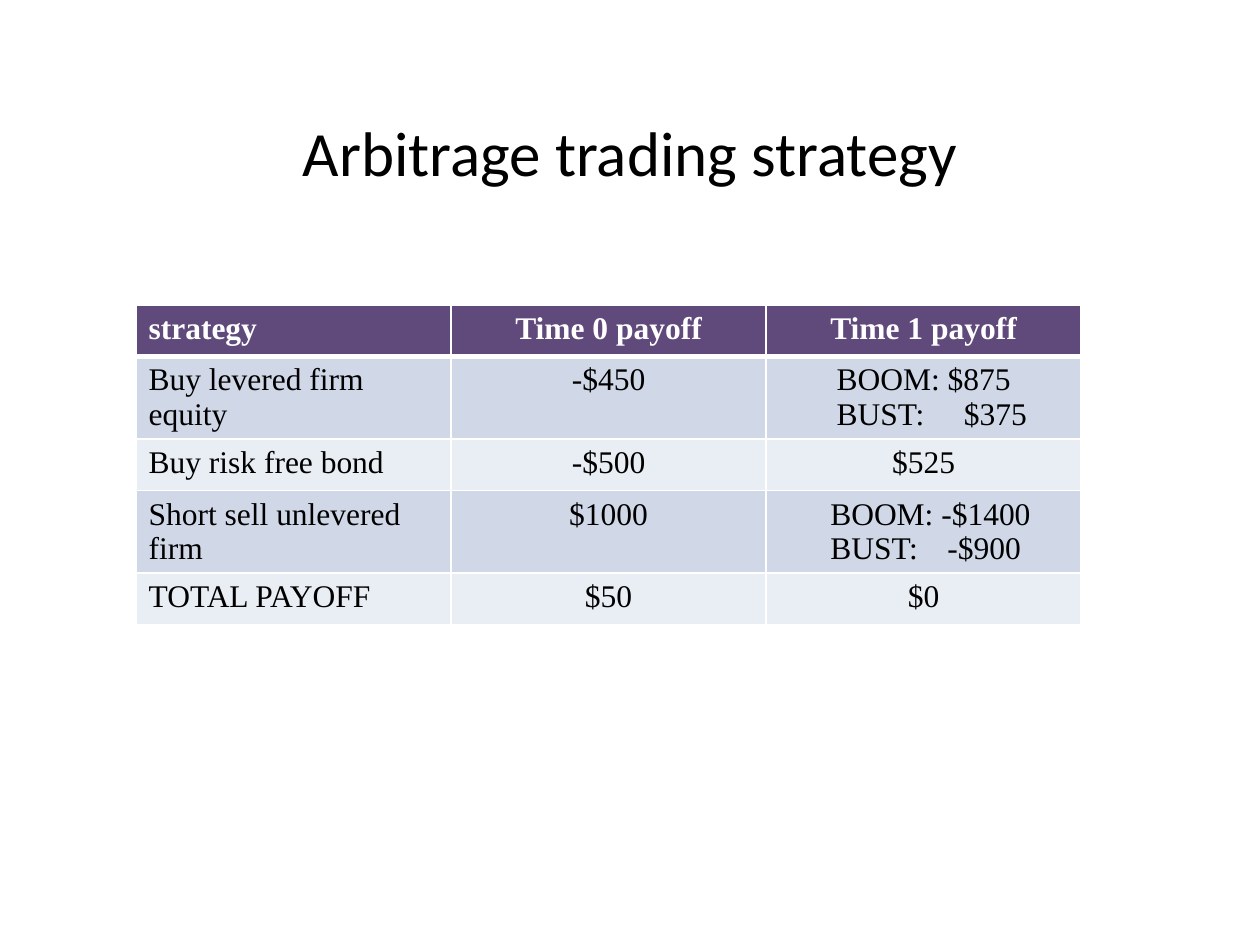
from lxml import etree
from pptx import Presentation
from pptx.dml.color import RGBColor
from pptx.enum.text import MSO_ANCHOR, PP_ALIGN
from pptx.oxml.ns import qn
from pptx.util import Inches, Pt

LEFT, MID = PP_ALIGN.LEFT, PP_ALIGN.CENTER
CENTER = MSO_ANCHOR.MIDDLE
COLORS = {"head": "604A7B", "odd": "D0D8E8", "even": "E9EDF4",
          "ink": "000000", "white": "FFFFFF"}
WIDE, HIGH = 10, 7.5
COL, ROW, TALL = 2.5, 0.41, 0.65
ROWS = [
    ["strategy", "Time 0 payoff", "Time 1 payoff"],
    ["Buy levered firm equity", "-$450", "BOOM: $875\nBUST:\t$375"],
    ["Buy risk free bond", "-$500", "$525"],
    ["Short sell unlevered firm", "$1000", "BOOM: -$1400\nBUST:\t-$900"],
    ["TOTAL PAYOFF", "$50", "$0"],
]
# Row: (left margin, tab stop) of its boom and bust lines
STOPS = {1: (0.56, 1.01), 3: (0.51, 0.93)}


def add_run(para, text, font, size, color, bold=False):
    run = para.add_run()
    run.text = text
    run.font.name = font
    run.font.size = Pt(size)
    run.font.bold = bold
    run.font.color.rgb = RGBColor.from_string(COLORS[color])


def add_title(slide, text):
    title = slide.shapes.title
    title.left, title.top = Inches(0.05 * WIDE), Inches(0.58)
    title.width, title.height = Inches(0.9 * WIDE), Inches(HIGH / 6)
    title.text_frame.vertical_anchor = CENTER
    para = title.text_frame.paragraphs[0]
    para.alignment = MID
    add_run(para, text, "Calibri", 36, "ink")


def add_edges(cell, row):
    """Draw white cell borders, thick below the header."""
    props = cell._tc.get_or_add_tcPr()
    widths = {"L": 1, "R": 1, "T": 3 if row == 1 else 1, "B": 3 if row == 0 else 1}
    for spot, (side, width) in enumerate(widths.items()):
        line = etree.Element(qn("a:ln" + side), w=str(Pt(width)))
        fill = etree.SubElement(line, qn("a:solidFill"))
        etree.SubElement(fill, qn("a:srgbClr"), val=COLORS["white"])
        props.insert(spot, line)


def add_stop(para, inches):
    tabs = etree.SubElement(para._p.get_or_add_pPr(), qn("a:tabLst"))
    etree.SubElement(tabs, qn("a:tab"), pos=str(Inches(inches)), algn="l")


def fill_cell(cell, text, row, col):
    shade = "head" if row == 0 else "odd" if row % 2 else "even"
    cell.fill.solid()
    cell.fill.fore_color.rgb = RGBColor.from_string(COLORS[shade])
    add_edges(cell, row)
    lines = text.split("\n")
    split = len(lines) > 1
    if split:
        margin, stop = STOPS[row]
        cell.margin_left = Inches(margin)
    frame = cell.text_frame
    for spot, line in enumerate(lines):
        para = frame.add_paragraph() if spot else frame.paragraphs[0]
        para.alignment = LEFT if split or col == 0 else MID
        if split:
            add_stop(para, stop)
        add_run(para, line, "Times New Roman", 18,
                "ink" if row else "white", row == 0)


def add_grid(slide):
    cols = len(ROWS[0])
    highs = [TALL if row in STOPS else ROW for row in range(len(ROWS))]
    table = slide.shapes.add_table(
        len(ROWS), cols, Inches(1.08), Inches(2.42),
        Inches(cols * COL), Inches(sum(highs))).table
    for col in table.columns:
        col.width = Inches(COL)
    for row, texts in enumerate(ROWS):
        table.rows[row].height = Inches(highs[row])
        for col, text in enumerate(texts):
            fill_cell(table.cell(row, col), text, row, col)


def main():
    deck = Presentation()
    deck.slide_width, deck.slide_height = Inches(WIDE), Inches(HIGH)
    slide = deck.slides.add_slide(deck.slide_layouts[5])
    add_title(slide, "Arbitrage trading strategy")
    add_grid(slide)
    deck.save("out.pptx")


if __name__ == "__main__":
    main()
